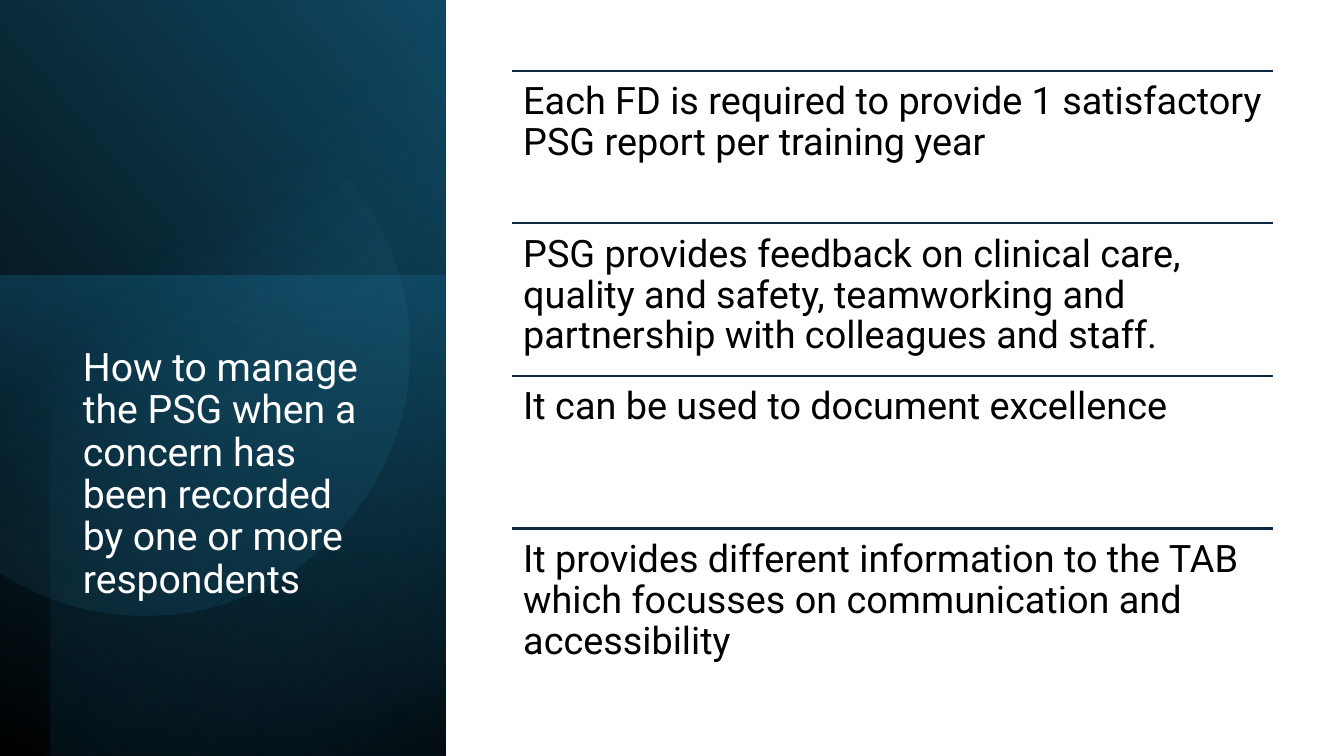
from dataclasses import dataclass
from math import acos, cos, pi, sin

from lxml.etree import SubElement
from pptx import Presentation
from pptx.dml.color import RGBColor
from pptx.enum.shapes import MSO_CONNECTOR, MSO_SHAPE
from pptx.enum.text import MSO_ANCHOR, MSO_AUTO_SIZE, PP_ALIGN
from pptx.oxml.ns import qn
from pptx.util import Pt


@dataclass(frozen=True)
class Theme:
    font: str = "Roboto"
    head: float = 28
    body: float = 27
    white: str = "FFFFFF"
    black: str = "000000"
    rule: str = "0E2841"
    deep: str = "104862"
    teal: str = "156082"
    dark: str = "0B3041"
    sky: str = "46B1E1"


class Deck:
    def __init__(self, theme):
        self.theme = theme
        self.file = Presentation()
        self.file.slide_width, self.file.slide_height = Pt(960), Pt(540)
        self.slide = self.file.slides.add_slide(self.file.slide_layouts[5])
        self.shapes = self.slide.shapes

    def shade(self, shape, stops, angle):
        """Fill with two stops of (place, colour, opacity); angle runs clockwise."""
        shape.shadow.inherit = False
        shape.line.fill.background()
        shape.fill.gradient()
        shape.fill.gradient_angle = (360 - angle) % 360
        for stop, (place, tone, _) in zip(shape.fill.gradient_stops, stops):
            stop.position = place / 100
            stop.color.rgb = RGBColor.from_string(tone)
        tones = shape._element.spPr.iter(qn("a:srgbClr"))
        for tone, (_, _, alpha) in zip(tones, stops):
            SubElement(tone, qn("a:alpha")).set("val", str(alpha * 1000))

    def block(self, x, y, wide, high, turn, flip, stops, angle):
        """Add a rectangle on its side; x, y, wide and high are as seen."""
        shift = (high - wide) / 2
        shape = self.shapes.add_shape(
            MSO_SHAPE.RECTANGLE, Pt(x - shift), Pt(y + shift), Pt(high), Pt(wide))
        shape.rotation = turn
        if flip:
            shape._element.spPr.find(qn("a:xfrm")).set("flipH", "1")
        self.shade(shape, stops, angle)

    def disc(self, x, y, radius, stops, angle, steps=120):
        """Add a circle cut off at the left edge of the slide."""
        end = pi - acos(x / radius)
        turns = [end * (2 * i / steps - 1) for i in range(steps + 1)]
        dots = [(Pt(x + radius * cos(t)), Pt(y + radius * sin(t))) for t in turns]
        outline = self.shapes.build_freeform(*dots[0])
        outline.add_line_segments(dots[1:], close=True)
        self.shade(outline.convert_to_shape(), stops, angle)

    def put(self, frame, text, size, tone):
        frame.word_wrap = True
        frame.auto_size = MSO_AUTO_SIZE.NONE
        para = frame.paragraphs[0]
        para.alignment = PP_ALIGN.LEFT
        para.line_spacing = 0.9
        run = para.add_run()
        run.text = text
        run.font.name = self.theme.font
        run.font.size = Pt(size)
        run.font.color.rgb = RGBColor.from_string(tone)

    def title(self, x, y, wide, high, text):
        shape = self.shapes.title
        shape.left, shape.top, shape.width, shape.height = map(Pt, (x, y, wide, high))
        shape.text_frame.vertical_anchor = MSO_ANCHOR.MIDDLE
        self.put(shape.text_frame, text, self.theme.head, self.theme.white)
        # Bring the title in front of the panel
        self.shapes._spTree.append(shape._element)

    def rule(self, x, y, wide):
        line = self.shapes.add_connector(
            MSO_CONNECTOR.STRAIGHT, Pt(x), Pt(y), Pt(x + wide), Pt(y))
        line.line.width = Pt(1.5)
        line.line.color.rgb = RGBColor.from_string(self.theme.rule)
        SubElement(line._element.spPr, qn("a:effectLst"))

    def text(self, x, y, wide, high, text):
        frame = self.shapes.add_textbox(Pt(x), Pt(y), Pt(wide), Pt(high)).text_frame
        frame.margin_left = frame.margin_right = Pt(8)
        frame.margin_top = frame.margin_bottom = Pt(8)
        frame.vertical_anchor = MSO_ANCHOR.TOP
        self.put(frame, text, self.theme.body, self.theme.black)


POINTS = [
    "Each FD is required to provide 1 satisfactory PSG report per training year",
    "PSG provides feedback on clinical care, quality and safety, teamworking and "
    "partnership with colleagues and staff.",
    "It can be used to document excellence",
    "It provides different information to the TAB which focusses on communication "
    "and accessibility",
]


def main():
    theme = Theme()
    deck = Deck(theme)

    # Shaded panel on the left
    deck.block(0, 0, 318.5, 540, 90, True,
               [(0, theme.black, 100), (100, theme.deep, 100)], 310)
    deck.block(0, 197, 318.5, 343, 270, False,
               [(0, theme.teal, 50), (100, theme.dark, 0)], 190)
    deck.block(36, 0, 282.5, 540, 270, True,
               [(0, theme.black, 59), (69, theme.teal, 0)], 220)
    deck.disc(103, 250, 189.4,
              [(39, theme.sky, 0), (100, theme.deep, 26)], 52)

    # Title on the panel
    deck.title(52, 218, 227, 242,
               "How to manage the PSG when a concern has been recorded "
               "by one or more respondents")

    # Ruled list of points
    left, top, wide, step = 365.75, 50.5, 543.5, 109
    for i, point in enumerate(POINTS):
        y = top + i * step
        deck.rule(left, y, wide)
        deck.text(left, y, wide, step, point)

    deck.file.save("out.pptx")


if __name__ == "__main__":
    main()
